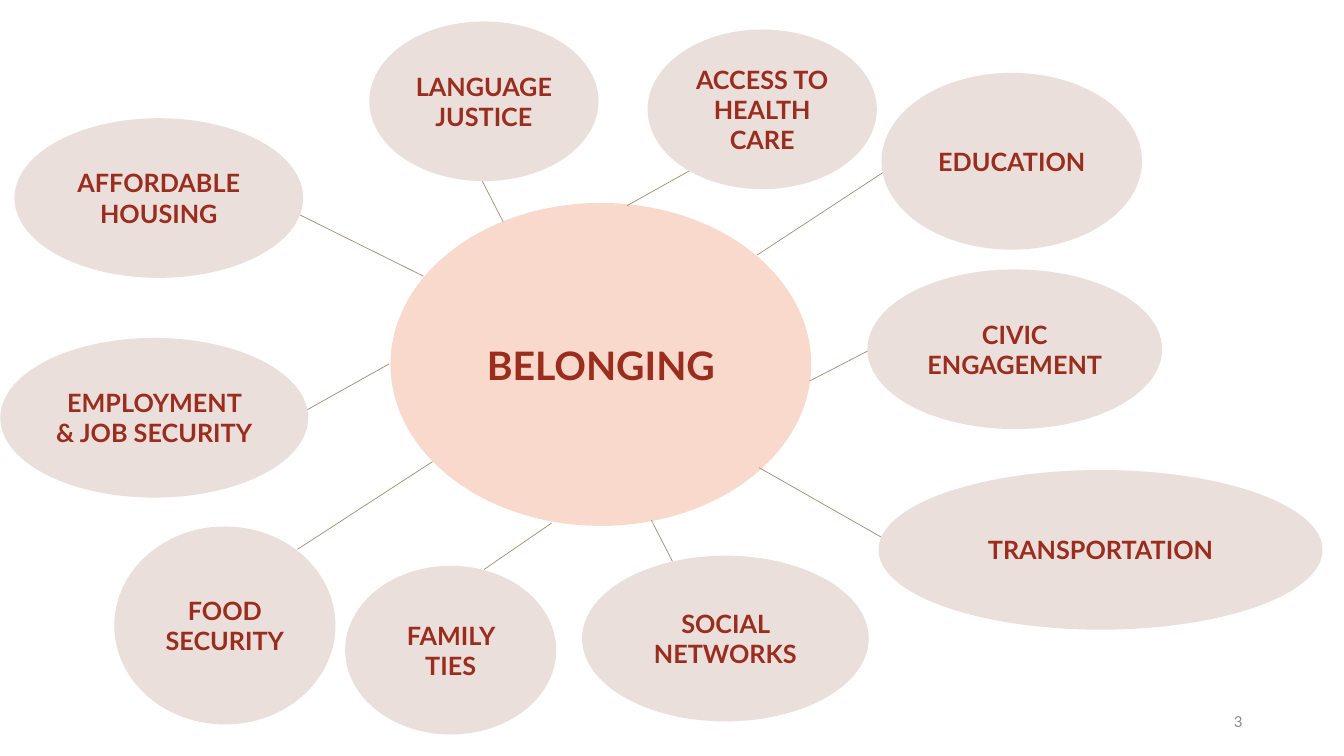
from dataclasses import dataclass

from lxml.etree import SubElement
from pptx import Presentation
from pptx.dml.color import RGBColor
from pptx.enum.shapes import MSO_CONNECTOR, MSO_SHAPE
from pptx.enum.text import MSO_ANCHOR, PP_ALIGN
from pptx.oxml.ns import qn
from pptx.slide import Slide
from pptx.text.text import TextFrame
from pptx.util import Inches, Pt

ROSE = "EBDFDB"
PEACH = "FAD9CD"
RUST = "9B2D1F"
TAN = "A28E6A"
GREY = "8C8C8C"


@dataclass
class Bubble:
    text: str
    left: float
    top: float
    width: float
    height: float
    fill: str = ROSE
    size: int = 18


@dataclass
class Link:
    x1: float
    y1: float
    x2: float
    y2: float


HUB = Bubble("BELONGING", 3.88, 2.02, 4.16, 3.19, PEACH, 28)

TOPICS = [
    Bubble("AFFORDABLE HOUSING", 0.15, 1.18, 2.85, 1.57),
    Bubble("EMPLOYMENT & JOB SECURITY", 0.01, 3.36, 3.04, 1.57),
    Bubble("FOOD SECURITY", 1.14, 5.23, 2.18, 1.95),
    Bubble("LANGUAGE JUSTICE", 3.67, 0.22, 2.26, 1.57),
    Bubble("EDUCATION", 8.75, 0.73, 2.57, 1.74),
    Bubble("ACCESS TO HEALTH CARE", 6.43, 0.3, 2.26, 1.57),
    Bubble("TRANSPORTATION", 8.72, 4.67, 4.39, 1.57),
    Bubble("SOCIAL NETWORKS", 5.78, 5.52, 2.83, 1.63),
    Bubble("FAMILY TIES", 3.43, 5.62, 2.08, 1.66),
    Bubble("CIVIC ENGAGEMENT", 8.61, 2.68, 2.91, 1.57),
]

LINKS = [
    Link(8.76, 5.34, 7.53, 4.64),
    Link(7.51, 2.53, 8.76, 1.71),
    Link(2.95, 2.12, 4.2, 2.74),
    Link(8.03, 3.78, 8.63, 3.47),
    Link(3.02, 4.08, 3.86, 3.61),
    Link(2.95, 5.45, 4.29, 4.58),
    Link(6.46, 5.16, 6.67, 5.57),
    Link(4.8, 5.65, 5.47, 5.19),
    Link(6.22, 2.04, 6.9, 1.66),
    Link(4.78, 1.79, 4.99, 2.2),
]


def color(code: str) -> RGBColor:
    return RGBColor.from_string(code)


def write(frame: TextFrame, text: str, face: str, size: int, ink: str,
          align: PP_ALIGN, bold: bool) -> None:
    frame.text = text
    frame.word_wrap = True
    frame.vertical_anchor = MSO_ANCHOR.MIDDLE
    line = frame.paragraphs[0]
    line.alignment = align
    font = line.runs[0].font
    font.name = face
    font.size = Pt(size)
    font.bold = bold
    font.color.rgb = color(ink)


def draw_bubble(slide: Slide, item: Bubble) -> None:
    shape = slide.shapes.add_shape(
        MSO_SHAPE.OVAL, Inches(item.left), Inches(item.top),
        Inches(item.width), Inches(item.height))
    shape.shadow.inherit = False
    shape.fill.solid()
    shape.fill.fore_color.rgb = color(item.fill)
    shape.line.color.rgb = color(item.fill)
    shape.line.width = Pt(1)
    write(shape.text_frame, item.text, "Lato", item.size, RUST,
          PP_ALIGN.CENTER, True)


def draw_link(slide: Slide, link: Link) -> None:
    line = slide.shapes.add_connector(
        MSO_CONNECTOR.STRAIGHT, Inches(link.x1), Inches(link.y1),
        Inches(link.x2), Inches(link.y2))
    line.line.color.rgb = color(TAN)
    line.line.width = Pt(0.5)
    SubElement(line._element.spPr, qn("a:effectLst"))


def draw_number(slide: Slide, text: str) -> None:
    box = slide.shapes.add_textbox(
        Inches(9.42), Inches(6.95), Inches(3), Inches(0.4))
    write(box.text_frame, text, "Calibri", 12, GREY, PP_ALIGN.RIGHT, False)


def main() -> None:
    deck = Presentation()
    deck.slide_width = Inches(13.33)
    deck.slide_height = Inches(7.5)
    slide = deck.slides.add_slide(deck.slide_layouts[6])
    draw_number(slide, "3")
    draw_bubble(slide, HUB)
    for link in LINKS:
        draw_link(slide, link)
    for topic in TOPICS:
        draw_bubble(slide, topic)
    deck.save("out.pptx")


if __name__ == "__main__":
    main()
